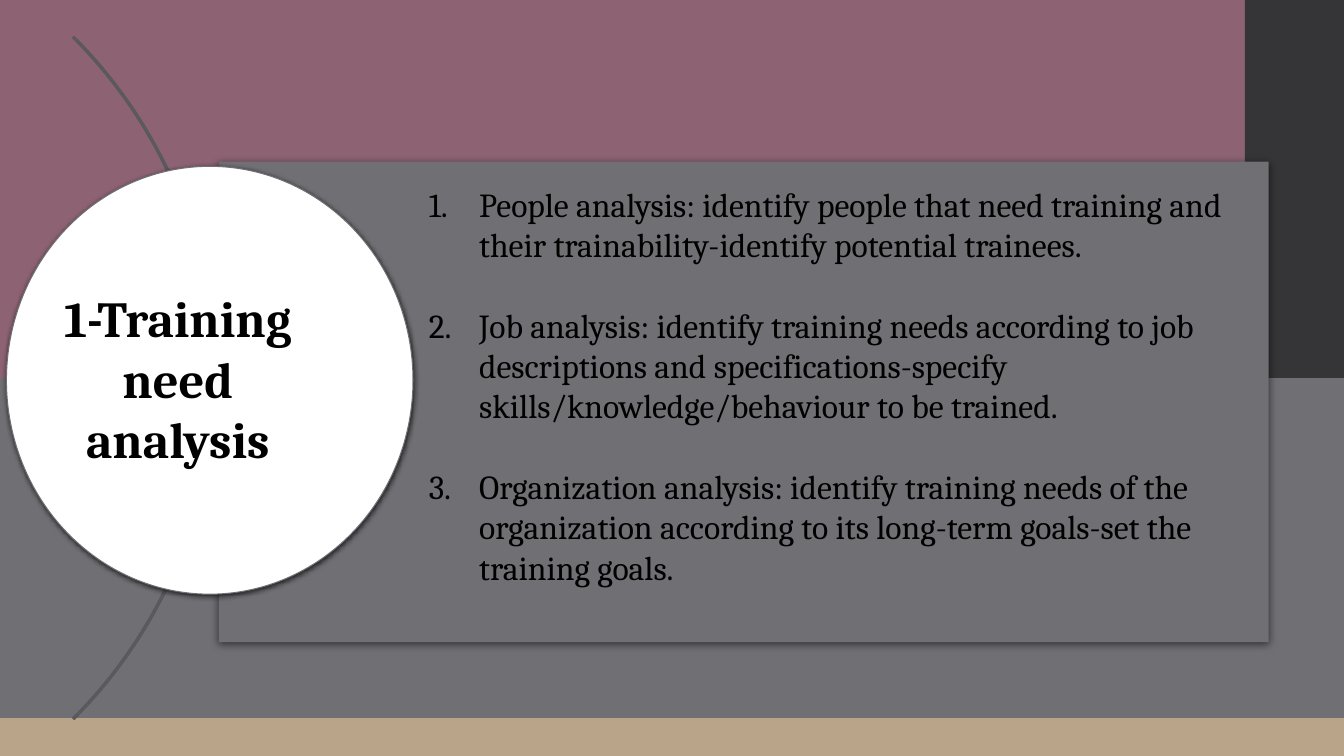
from lxml.etree import SubElement
from pptx import Presentation
from pptx.dml.color import RGBColor
from pptx.enum.shapes import MSO_SHAPE as Preset
from pptx.enum.text import MSO_ANCHOR as Anchor, PP_ALIGN as Align
from pptx.oxml.ns import qn
from pptx.util import Pt

HEADING = ["1-Training", "need", "analysis"]
ANALYSES = [
    "People analysis: identify people that need training and their trainability-identify potential trainees.",
    "Job analysis: identify training needs according to job descriptions and specifications-specify "
    "skills/knowledge/behaviour to be trained.",
    "Organization analysis: identify training needs of the organization according to its long-term "
    "goals-set the training goals.",
]
FONT = "Cambria"

MAUVE = RGBColor(0x8D, 0x63, 0x74)
CHARCOAL = RGBColor(0x35, 0x35, 0x37)
GREY = RGBColor(0x6F, 0x6F, 0x74)
ARC_GREY = RGBColor(0x59, 0x59, 0x5D)
TAN = RGBColor(0xB9, 0xA4, 0x89)
WHITE = RGBColor(0xFF, 0xFF, 0xFF)
BLACK = RGBColor(0, 0, 0)

WIDTH, HEIGHT = 960, 540
SIDE_LEFT = 889.2
FOOT_TOP = 513
ARC_SIZE = 689.6
ARC_CENTER_X = -190.8
BACKDROP = [
    ((SIDE_LEFT, 0, WIDTH - SIDE_LEFT, HEIGHT), CHARCOAL),
    ((0, HEIGHT / 2, WIDTH, HEIGHT / 2), GREY),
    ((0, FOOT_TOP, WIDTH, HEIGHT - FOOT_TOP), TAN),
]


def place(preset, box, fill=None, line=None, weight=0.75):
    shape = slide.shapes.add_shape(preset, *map(Pt, box))
    shape.shadow.inherit = False
    if fill is None:
        shape.fill.background()
    else:
        shape.fill.solid()
        shape.fill.fore_color.rgb = fill
    if line is None:
        shape.line.fill.background()
    else:
        shape.line.color.rgb = line
        shape.line.width = Pt(weight)
    return shape


def cast_shadow(shape, opacity, blur, distance):
    effects = shape.element.spPr.find(qn("a:effectLst"))
    shadow = SubElement(effects, qn("a:outerShdw"), blurRad=str(Pt(blur)), dist=str(Pt(distance)),
                        dir="5400000", algn="ctr", rotWithShape="0")
    color = SubElement(shadow, qn("a:srgbClr"), val=str(BLACK))
    SubElement(color, qn("a:alpha"), val=str(opacity * 1000))


def style(paragraph, size, bold):
    paragraph.font.name = FONT
    paragraph.font.size = Pt(size)
    paragraph.font.bold = bold
    paragraph.font.color.rgb = BLACK


deck = Presentation()
deck.slide_width, deck.slide_height = Pt(WIDTH), Pt(HEIGHT)
slide = deck.slides.add_slide(deck.slide_layouts[5])
slide.background.fill.solid()
slide.background.fill.fore_color.rgb = MAUVE

for box, color in BACKDROP:
    place(Preset.RECTANGLE, box, color)

arc_box = (ARC_CENTER_X - ARC_SIZE / 2, (HEIGHT - ARC_SIZE) / 2, ARC_SIZE, ARC_SIZE)
arc = place(Preset.BLOCK_ARC, arc_box, line=ARC_GREY, weight=1.1)
for index, value in enumerate((189, 27, 0.002)):
    arc.adjustments[index] = value

panel = place(Preset.RECTANGLE, (156.4, 115.4, 749.8, 343.4), GREY)
cast_shadow(panel, 55, 6, 2)
circle = place(Preset.OVAL, (4.6, 118.8, 290.4, 305.6), WHITE, GREY)
cast_shadow(circle, 75, 4, 1.2)

heading = slide.shapes.title
heading.element.getparent().append(heading.element)
heading.left, heading.top, heading.width, heading.height = map(Pt, (32, 201, 190, 138))
heading_frame = heading.text_frame
heading_frame.text = "\n".join(HEADING)
heading_frame.vertical_anchor = Anchor.MIDDLE
heading_frame.margin_left = heading_frame.margin_right = 0
for paragraph in heading_frame.paragraphs:
    paragraph.alignment = Align.CENTER
    style(paragraph, 36, True)

analyses = slide.shapes.add_textbox(*map(Pt, (299.2, 127.6, 597.6, 356.4)))
analyses_frame = analyses.text_frame
analyses_frame.word_wrap = True
analyses_frame.text = "\n".join(ANALYSES)
for index, paragraph in enumerate(analyses_frame.paragraphs):
    properties = paragraph._p.get_or_add_pPr()
    properties.set("marL", str(Pt(36)))
    properties.set("indent", str(Pt(-36)))
    SubElement(properties, qn("a:buFont"), typeface=FONT)
    SubElement(properties, qn("a:buAutoNum"), type="arabicPeriod")
    if index:
        paragraph.space_before = Pt(28.8)
    style(paragraph, 24, False)

deck.save("out.pptx")
